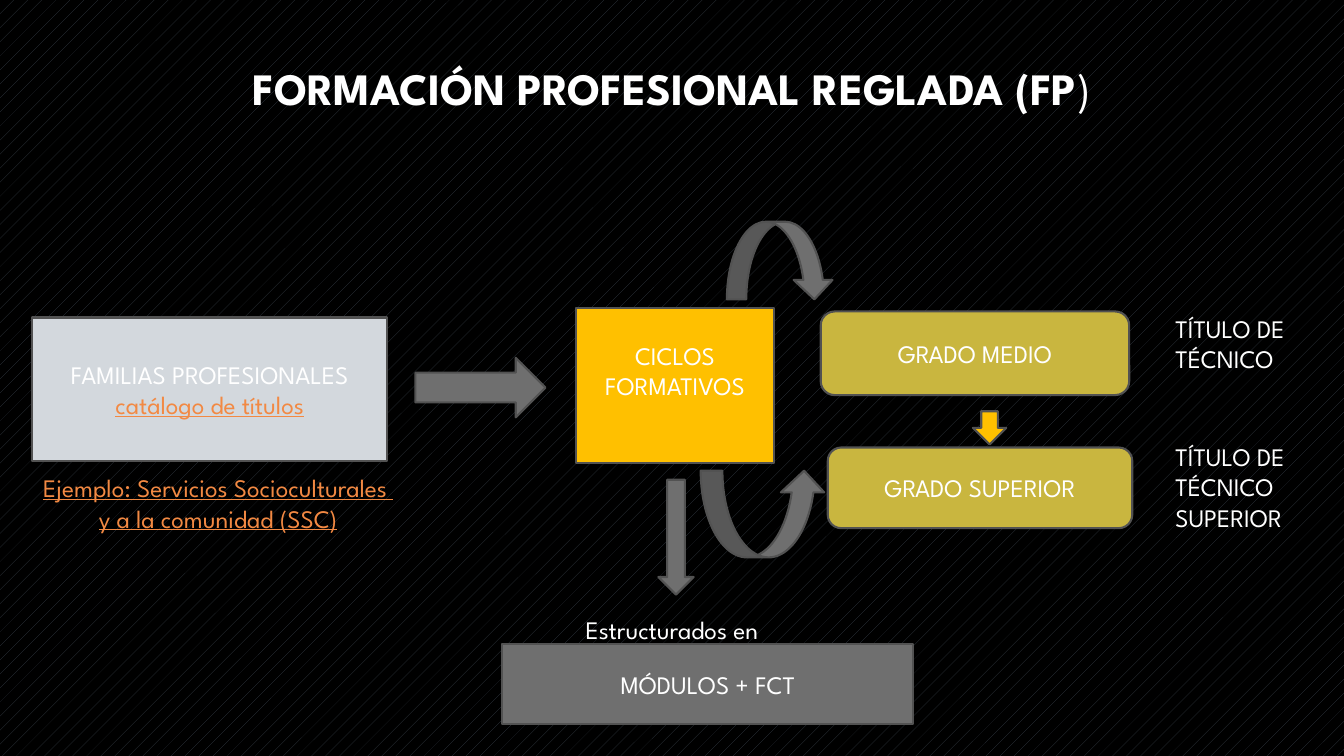
from dataclasses import dataclass

from pptx import Presentation
from pptx import util as u
from pptx.dml.color import RGBColor
from pptx.enum import dml, shapes, text

SHAPE = shapes.MSO_SHAPE
CENTER, LEFT = text.PP_ALIGN.CENTER, text.PP_ALIGN.LEFT


@dataclass(frozen=True)
class Theme:
    font: str = "League Spartan"
    title_size: float = 32
    body_size: float = 18
    line_width: float = 1.5
    white: str = "FFFFFF"
    title_end: str = "A6A6A6"
    link: str = "F28943"
    outline: str = "525252"
    gray: str = "6F6F6F"
    pale: str = "D3D8DD"
    amber: str = "FFC000"
    olive: str = "C9B63F"
    back: str = "000000"
    back_dots: str = "363D46"


T = Theme()


def rgb(value):
    return RGBColor.from_string(value)


def place(box, dx, dy, w, h):
    """Lengths of a part offset from the corner of its region."""
    return [u.Inches(n) for n in (box[0] + dx, box[1] + dy, w, h)]


def add_run(p, content, size=T.body_size, color=T.white, underline=None, bold=None):
    r = p.add_run()
    r.text = content
    f = r.font
    f.name, f.size, f.bold, f.underline = T.font, u.Pt(size), bold, underline
    f.color.rgb = rgb(color)
    return r


def write(tf, lines, align=CENTER):
    """Each line is a text, or a (text, colour) pair for a link."""
    for i, line in enumerate(lines):
        p = tf.paragraphs[0] if i == 0 else tf.add_paragraph()
        p.alignment = align
        if isinstance(line, tuple):
            add_run(p, line[0], color=line[1], underline=True)
        else:
            add_run(p, line)


def add_block(slide, kind, at, fill, lines=()):
    sp = slide.shapes.add_shape(kind, *at)
    sp.shadow.inherit = False
    sp.fill.solid()
    sp.fill.fore_color.rgb = rgb(fill)
    sp.line.color.rgb = rgb(T.outline)
    sp.line.width = u.Pt(T.line_width)
    tf = sp.text_frame
    tf.word_wrap = True
    tf.vertical_anchor = text.MSO_ANCHOR.MIDDLE
    write(tf, lines)
    return sp


def add_label(slide, at, lines, align=LEFT):
    tf = slide.shapes.add_textbox(*at).text_frame
    tf.word_wrap = False
    tf.auto_size = text.MSO_AUTO_SIZE.SHAPE_TO_FIT_TEXT
    write(tf, lines, align)


def paint_background(slide):
    fill = slide.background.fill
    fill.patterned()
    fill.pattern = dml.MSO_PATTERN.PERCENT_5
    fill.fore_color.rgb = rgb(T.back_dots)
    fill.back_color.rgb = rgb(T.back)


def add_title(slide, box):
    tf = slide.shapes.add_textbox(*place(box, 0, 0, *box[2:])).text_frame
    tf.word_wrap = True
    tf.vertical_anchor = text.MSO_ANCHOR.MIDDLE
    p = tf.paragraphs[0]
    p.alignment = CENTER
    for content, bold in (("FORMACIÓN PROFESIONAL REGLADA (FP", True), (")", False)):
        fill = add_run(p, content, T.title_size, bold=bold).font.fill
        fill.gradient()
        fill.gradient_angle = 267
        for stop, color in zip(fill.gradient_stops, (T.white, T.title_end)):
            stop.color.rgb = rgb(color)


def add_families(slide, box):
    # Families box, its example below and the arrow to the cycles
    add_block(slide, SHAPE.RECTANGLE, place(box, 0.32, 0, 3.52, 1.42), T.pale,
              ["FAMILIAS PROFESIONALES", ("catálogo de títulos", T.link)])
    add_label(slide, place(box, 0, 1.49, 4.33, 0.71),
              [("Ejemplo: Servicios Socioculturales ", T.link),
               ("y a la comunidad (SSC)", T.link)], CENTER)
    add_block(slide, SHAPE.RIGHT_ARROW, place(box, 4.12, 0.4, 1.29, 0.59), T.gray)


def add_cycles(slide, box):
    # Cycles box, with its text raised above the middle
    sp = add_block(slide, SHAPE.RECTANGLE, place(box, 0, 0, *box[2:]), T.amber,
                   ["CICLOS FORMATIVOS"])
    sp.text_frame.margin_bottom = u.Inches(0.35)
    # Arrows leading out to both grades and to the modules
    for kind, *at in ((SHAPE.CURVED_DOWN_ARROW, 1.5, -0.86, 1.06, 0.77),
                      (SHAPE.CURVED_UP_ARROW, 1.24, 1.61, 1.24, 0.86),
                      (SHAPE.DOWN_ARROW, 0.82, 1.7, 0.35, 1.14)):
        add_block(slide, kind, place(box, *at), T.gray)


def add_grades(slide, box):
    # Grades, one above the other
    for name, *at in (("GRADO MEDIO", 0, 0, 3.06, 0.83),
                      ("GRADO SUPERIOR", 0.07, 1.35, 3.02, 0.8)):
        add_block(slide, SHAPE.ROUNDED_RECTANGLE, place(box, *at), T.olive, [name])
    add_block(slide, SHAPE.DOWN_ARROW, place(box, 1.51, 0.99, 0.33, 0.33), T.amber)
    # Certificate earned at each grade
    for dy, h, lines in ((-0.03, 0.71, ["TÍTULO DE", "TÉCNICO"]),
                         (1.24, 1.01, ["TÍTULO DE", "TÉCNICO", "SUPERIOR"])):
        add_label(slide, place(box, 3.42, dy, 1.37, h), lines)


def add_modules(slide, box):
    add_label(slide, place(box, 0.73, 0, 2.23, 0.4), ["Estructurados en"])
    add_block(slide, SHAPE.RECTANGLE, place(box, 0, 0.34, 4.08, 0.79), T.gray,
              ["MÓDULOS + FCT"])


def main():
    prs = Presentation()
    prs.slide_width, prs.slide_height = u.Inches(13.33), u.Inches(7.5)
    slide = prs.slides.add_slide(prs.slide_layouts[6])
    paint_background(slide)
    add_title(slide, (1.25, 0.41, 10.83, 0.91))
    add_families(slide, (0, 3.15, 5.41, 2.2))
    add_cycles(slide, (5.71, 3.06, 1.97, 1.53))
    add_grades(slide, (8.14, 3.09, 4.79, 2.25))
    add_modules(slide, (4.98, 6.05, 4.08, 1.13))
    prs.save("out.pptx")


if __name__ == "__main__":
    main()
